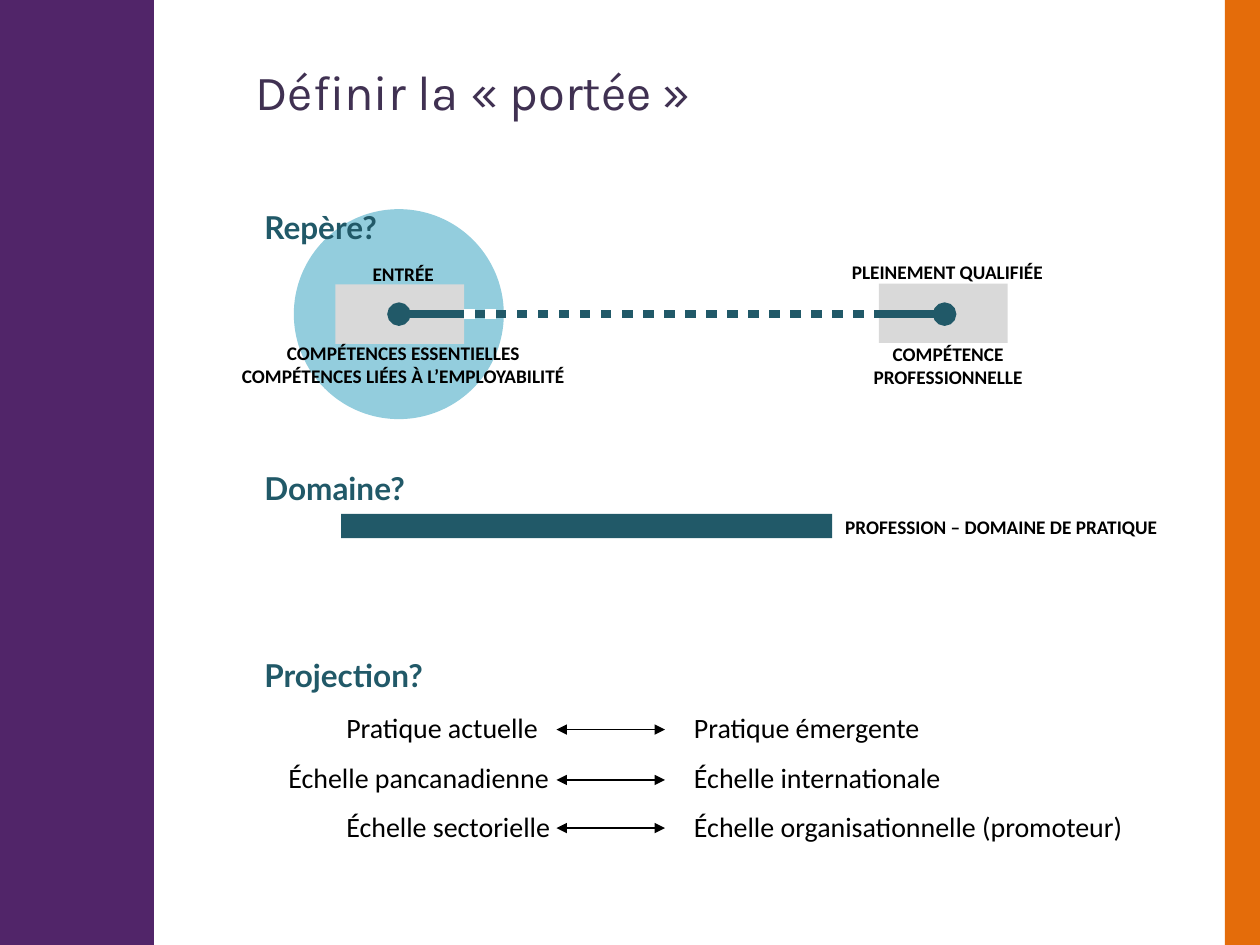
"""Build the slide that defines the scope: benchmark, domain and projection."""
import pptx
import pptx.chart.data
import pptx.dml.color
import pptx.enum.dml
import pptx.enum.shapes
import pptx.enum.text
import pptx.oxml.ns
import pptx.util
from lxml import etree

Pt = pptx.util.Pt
SHAPE = pptx.enum.shapes.MSO_SHAPE
ALIGN = pptx.enum.text.PP_ALIGN

COLORS = {
    "teal": "215968", "aqua": "93CDDD", "grey": "D9D9D9", "white": "FFFFFF",
    "black": "000000", "title": "403152", "purple": "512569", "orange": "E46C0A",
}
STYLES = {
    "title": ("Karla", 28, False, "title", ALIGN.LEFT),
    "heading": ("Lato", 18, True, "teal", ALIGN.LEFT),
    "caption": ("Calibri", 11, True, "black", ALIGN.CENTER),
    "label": ("Calibri", 11, True, "black", ALIGN.LEFT),
    "body": ("Calibri", 16, False, "black", ALIGN.LEFT),
}
BANDS = [("purple", (0, 0, 88, 540)), ("orange", (700, 0, 20, 540))]
CIRCLE = (167.9, 119.5, 120, 120)
ENTRY_BOX = (191.7, 162.5, 73.6, 34)
QUALIFIED_BOX = (502.3, 162, 73.6, 34)
DOMAIN_BAR = (195, 293.6, 280.6, 14)
SCALE_Y = 179.5
SCALE_ENDS = (228, 539.8)
DOTS_END = 505.5

TITLE = ("Définir la « portée »", "title", (139, 31.7, 365.8, 41.2))
HEADINGS = [("Repère?", 115.2), ("Domaine?", 264.4), ("Projection?", 371.5)]
CAPTIONS = [
    ("ENTRÉE", "caption", (193.7, 146.2, 73.6, 20.6)),
    ("PLEINEMENT QUALIFIÉE", "caption", (474.8, 145, 133.2, 20.6)),
    ("COMPÉTENCES ESSENTIELLES\nCOMPÉTENCES LIÉES À L’EMPLOYABILITÉ", "caption",
     (123.6, 191.5, 213.8, 33.9)),
    ("COMPÉTENCE PROFESSIONNELLE", "caption", (482.4, 192.2, 118.8, 47.5)),
    ("PROFESSION – DOMAINE DE PRATIQUE", "label", (475.9, 291, 216, 20.6)),
]
PROJECTIONS = [
    ("Pratique actuelle", 190.8, "Pratique émergente", 402.5),
    ("Échelle pancanadienne", 157.7, "Échelle internationale", 431.3),
    ("Échelle sectorielle", 190.8, "Échelle organisationnelle (promoteur)", 458.8),
]
LEFT_END, RIGHT_X, RIGHT_END = 355.3, 389.5, 680.4
ARROW_ENDS = (318, 380)
ROW_HEIGHT = 26.7


def rgb(name):
    return pptx.dml.color.RGBColor.from_string(COLORS[name])


def add_block(slide, color, box, kind=SHAPE.RECTANGLE):
    sp = slide.shapes.add_shape(kind, *map(Pt, box))
    sp.shadow.inherit = False
    sp.fill.solid()
    sp.fill.fore_color.rgb = rgb(color)
    sp.line.fill.background()
    return sp


def add_text(slide, text, style, box):
    font, size, bold, color, align = STYLES[style]
    tf = slide.shapes.add_textbox(*map(Pt, box)).text_frame
    tf.word_wrap = True
    tf.auto_size = pptx.enum.text.MSO_AUTO_SIZE.SHAPE_TO_FIT_TEXT
    tf.text = text
    for p in tf.paragraphs:
        p.alignment = align
        for r in p.runs:
            r.font.name, r.font.size, r.font.bold = font, Pt(size), bold
            r.font.color.rgb = rgb(color)


def add_line(slide, ends, y, color, width, tip=None):
    x1, x2 = ends
    line = slide.shapes.add_connector(
        pptx.enum.shapes.MSO_CONNECTOR.STRAIGHT, Pt(x1), Pt(y), Pt(x2), Pt(y))
    line.line.color.rgb = rgb(color)
    line.line.width = Pt(width)
    if tip:
        ln = line.line._get_or_add_ln()
        for tag in ("a:headEnd", "a:tailEnd"):
            etree.SubElement(ln, pptx.oxml.ns.qn(tag), type=tip)
    etree.SubElement(line._element.spPr, pptx.oxml.ns.qn("a:effectLst"))
    return line


def main():
    prs = pptx.Presentation()
    prs.slide_width, prs.slide_height = Pt(720), Pt(540)
    slide = prs.slides.add_slide(prs.slide_layouts[6])

    for color, box in BANDS:
        add_block(slide, color, box)
    add_block(slide, "aqua", CIRCLE, SHAPE.OVAL)
    add_block(slide, "grey", QUALIFIED_BOX)
    entry = add_block(slide, "grey", ENTRY_BOX)
    add_line(slide, SCALE_ENDS, SCALE_Y, "teal", 4.5, "oval")
    dots = add_line(slide, (ENTRY_BOX[0] + ENTRY_BOX[2], DOTS_END), SCALE_Y, "white", 6)
    dots.line.dash_style = pptx.enum.dml.MSO_LINE.ROUND_DOT
    dots.begin_connect(entry, 3)
    add_block(slide, "teal", DOMAIN_BAR)

    add_text(slide, *TITLE)
    for text, y in HEADINGS:
        add_text(slide, text, "heading", (144, y, 462, 29))
    for caption in CAPTIONS:
        add_text(slide, *caption)

    for left, x, right, y in PROJECTIONS:
        add_text(slide, left, "body", (x, y, LEFT_END - x, ROW_HEIGHT))
        add_text(slide, right, "body", (RIGHT_X, y, RIGHT_END - RIGHT_X, ROW_HEIGHT))
        add_line(slide, ARROW_ENDS, y + 14.4, "black", 0.75, "triangle")

    prs.save("out.pptx")


if __name__ == "__main__":
    main()
